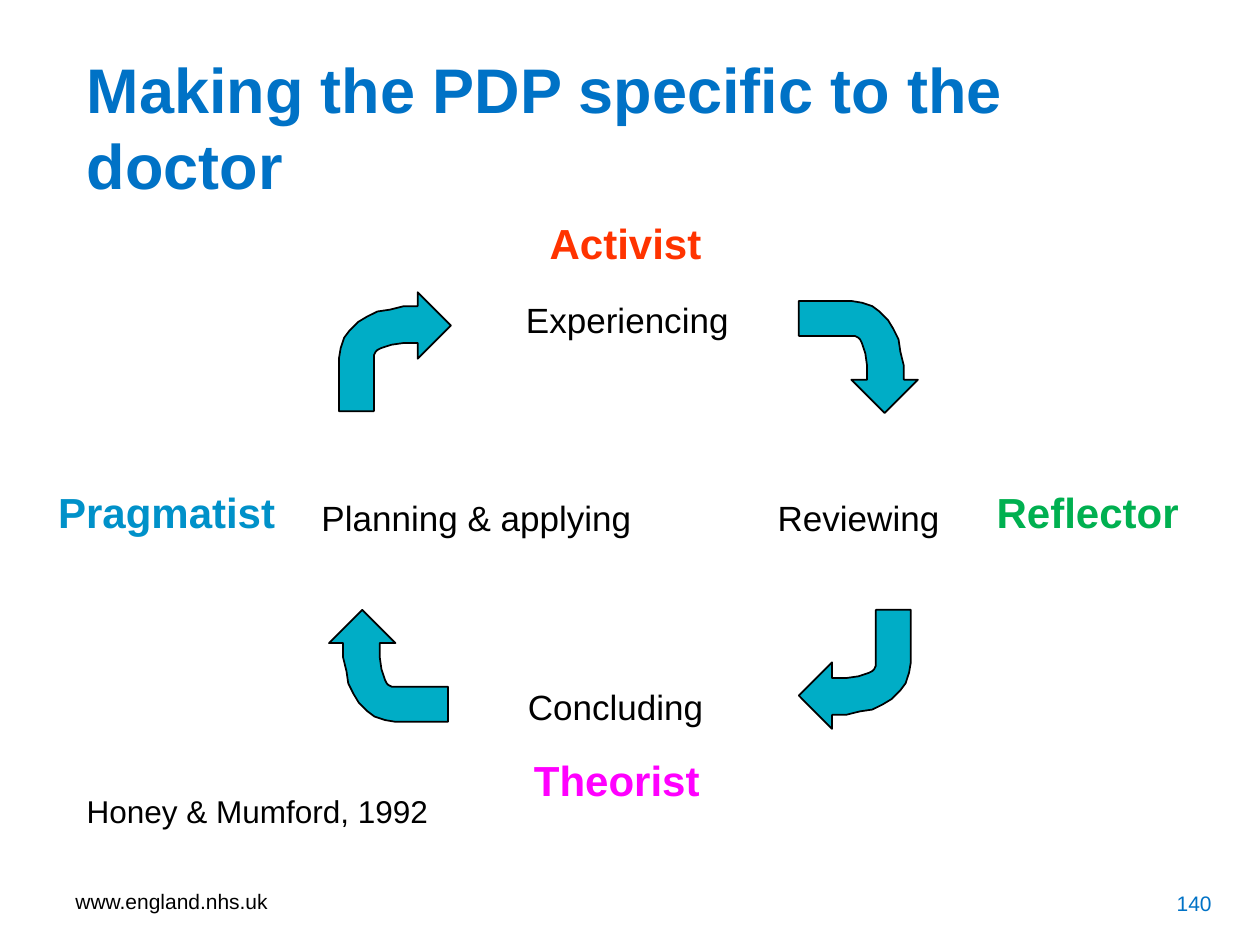
from pptx import Presentation
from pptx.dml.color import RGBColor
from pptx.enum.text import MSO_ANCHOR, PP_ALIGN
from pptx.util import Pt

BLACK = "000000"
BLUE = "0072C6"
TEAL = "00ADC6"

ARROW_HEIGHT = 68
ARROW_WIDTH = 64
ARROW_OUTLINE = [
    (64, 19), (45, 0), (45, 8.5), (37, 8.5), (29, 9.5), (22, 11),
    (16, 13.5), (11, 17), (6.5, 21.5), (3, 26.5), (1, 32), (0, 38),
    (0, 68), (19.5, 68), (19.5, 38), (20, 36), (21, 34.5), (22.5, 33),
    (24.5, 31.5), (30, 29.5), (37, 29), (45, 29), (45, 38),
]

ARROW_CORNERS = [(193.7, 167), (456.5, 172), (456.5, 348.5), (188, 348.5)]

STAGES = [
    ("Experiencing", 286.5, 167, 144),
    ("Reviewing", 422.6, 280, 136),
    ("Concluding", 257.8, 388, 188),
    ("Planning & applying", 161.3, 280, 222),
]

STYLES = [
    ("Reflector", 553, 274.3, 137, "00B050"),
    ("Theorist", 297.4, 427.7, 110, "FF00FF"),
    ("Activist", 297.4, 121, 120, "FF3300"),
    ("Pragmatist", 25.2, 274.3, 140, "0091C9"),
]


def color(value):
    return RGBColor.from_string(value)


def add_text(page, text, left, top, width, height, size, fill=BLACK, bold=False,
             align=PP_ALIGN.LEFT, anchor=MSO_ANCHOR.TOP):
    box = page.shapes.add_textbox(Pt(left), Pt(top), Pt(width), Pt(height))
    frame = box.text_frame
    frame.word_wrap = True
    frame.vertical_anchor = anchor
    frame.text = text
    paragraph = frame.paragraphs[0]
    paragraph.alignment = align
    for span in paragraph.runs:
        span.font.name = "Arial"
        span.font.size = Pt(size)
        span.font.bold = bold
        span.font.color.rgb = color(fill)


def turn_outline(quarter_turns):
    points = ARROW_OUTLINE
    height, width = ARROW_HEIGHT, ARROW_WIDTH
    for _ in range(quarter_turns):
        points = [(height - y, x) for x, y in points]
        height, width = width, height
    return points


def add_bent_arrow(page, left, top, quarter_turns):
    first, *rest = turn_outline(quarter_turns)
    builder = page.shapes.build_freeform(*first, scale=Pt(1))
    builder.add_line_segments(rest, close=True)
    arrow = builder.convert_to_shape(Pt(left), Pt(top))
    arrow.shadow.inherit = False
    arrow.fill.solid()
    arrow.fill.fore_color.rgb = color(TEAL)
    arrow.line.color.rgb = color(BLACK)
    arrow.line.width = Pt(1)


def add_cycle(page):
    for quarter_turns, (left, top) in enumerate(ARROW_CORNERS):
        add_bent_arrow(page, left, top, quarter_turns)
    for text, left, top, width in STAGES:
        add_text(page, text, left, top, width, 31.5, 20, align=PP_ALIGN.CENTER)
    for text, left, top, width, fill in STYLES:
        add_text(page, text, left, top, width, 36.5, 24, fill, True, PP_ALIGN.CENTER)


def main():
    deck = Presentation()
    deck.slide_width = Pt(720)
    deck.slide_height = Pt(540)
    page = deck.slides.add_slide(deck.slide_layouts[6])

    add_text(page, "Making the PDP specific to the doctor", 42.5, 48.2, 652.3, 70.6,
             36, BLUE, True, anchor=MSO_ANCHOR.BOTTOM)
    add_cycle(page)
    add_text(page, "Honey & Mumford, 1992", 42.5, 449.3, 222, 29, 18)
    add_text(page, "www.england.nhs.uk", 36, 500.4, 168, 28.8, 12,
             anchor=MSO_ANCHOR.MIDDLE)
    add_text(page, "140", 531.4, 501.8, 168, 28.8, 12, BLUE,
             align=PP_ALIGN.RIGHT, anchor=MSO_ANCHOR.MIDDLE)

    deck.save("out.pptx")


if __name__ == "__main__":
    main()
